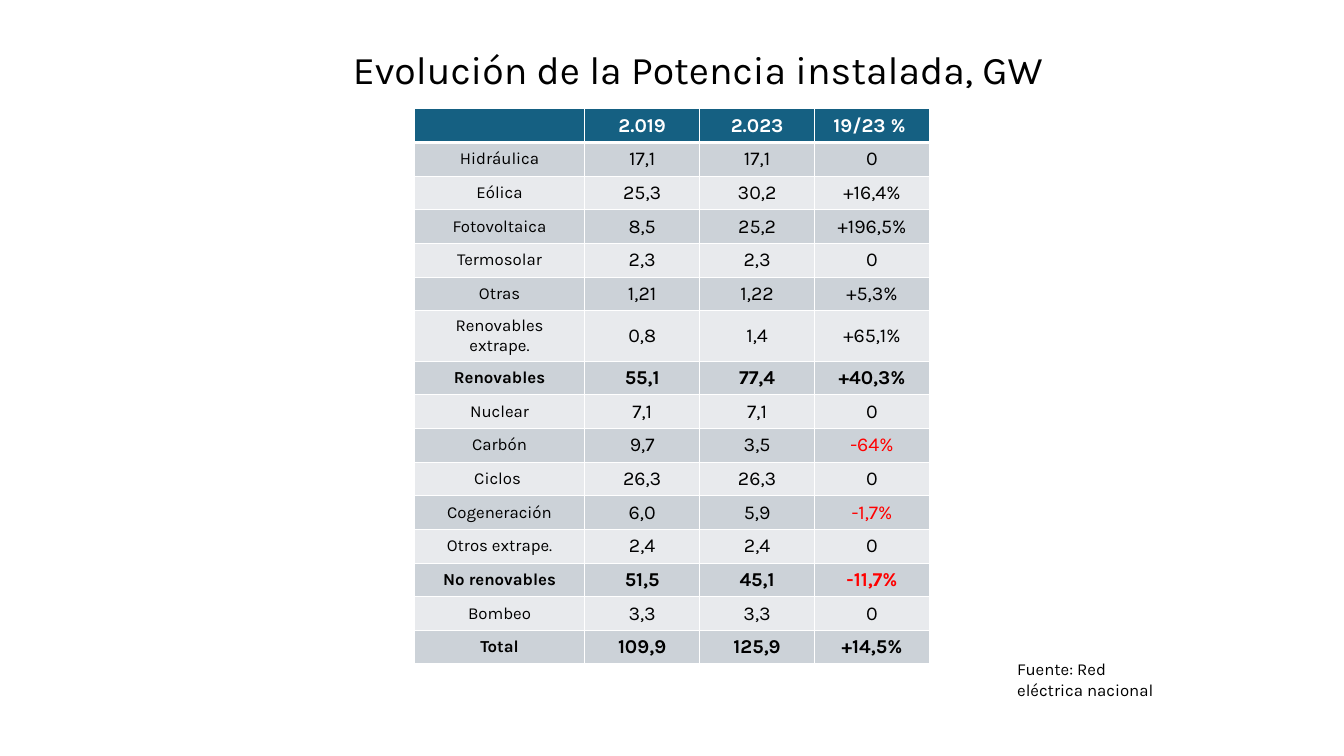
"""Build the slide on the evolution of installed power capacity."""
from dataclasses import dataclass

from lxml.etree import SubElement
from pptx import Presentation
from pptx.dml.color import RGBColor
from pptx.enum.text import MSO_ANCHOR as Anchor, PP_ALIGN as Align
from pptx.oxml.ns import qn
from pptx.slide import Slide
from pptx.table import _Cell as Cell
from pptx.text.text import TextFrame
from pptx.util import Emu, Pt

EMU_PER_PX = 9144


@dataclass(frozen=True)
class Theme:
    font: str = "Karla"
    ink: str = "000000"
    falling: str = "FF0000"
    white: str = "FFFFFF"
    header: str = "156082"
    bands: tuple[str, str] = ("CCD2D8", "E8EAED")
    title_size: int = 28
    figure_size: int = 14
    label_size: int = 12
    rule: int = 1
    header_rule: int = 3


@dataclass(frozen=True)
class Box:
    left: int
    top: int
    width: int
    height: int

    def emu(self) -> tuple[Emu, ...]:
        return tuple(map(px, (self.left, self.top, self.width, self.height)))


@dataclass(frozen=True)
class Source:
    label: str
    in_2019: str
    in_2023: str
    change: str
    subtotal: bool = False

    def texts(self) -> tuple[str, ...]:
        return self.label, self.in_2019, self.in_2023, self.change


THEME = Theme()
HEADINGS = Source("", "2.019", "2.023", "19/23 % ", True)
SOURCES = (
    Source("Hidráulica", "17,1", "17,1", "0"),
    Source("Eólica", "25,3", "30,2", "+16,4%"),
    Source("Fotovoltaica", "8,5", "25,2", "+196,5%"),
    Source("Termosolar", "2,3", "2,3", "0"),
    Source("Otras", "1,21", "1,22", "+5,3%"),
    Source("Renovables extrape.", "0,8", "1,4", "+65,1%"),
    Source("Renovables", "55,1", "77,4", "+40,3%", True),
    Source("Nuclear", "7,1", "7,1", "0"),
    Source("Carbón", "9,7", "3,5", "-64%"),
    Source("Ciclos ", "26,3", "26,3", "0"),
    Source("Cogeneración", "6,0", "5,9", "-1,7%"),
    Source("Otros extrape.", "2,4", "2,4", "0"),
    Source("No renovables", "51,5", "45,1", "-11,7%", True),
    Source("Bombeo", "3,3", "3,3", "0"),
    Source("Total", "109,9", "125,9", "+14,5%", True),
)
COLUMN_WIDTHS = (169, 114, 114, 114)
HEADER_HEIGHT, ROW_HEIGHT = 26, 29


def px(length: int) -> Emu:
    return Emu(length * EMU_PER_PX)


def write(frame: TextFrame, text: str, *, size: int, color: str = THEME.ink,
          bold: bool = False, align: Align = Align.LEFT, spacing: float = 1.0) -> None:
    paragraph = frame.paragraphs[0]
    paragraph.alignment = align
    paragraph.line_spacing = spacing
    if not text:
        SubElement(paragraph._p, qn("a:endParaRPr"), sz=str(size * 100))
        return
    run = paragraph.add_run()
    run.text = text
    run.font.name = THEME.font
    run.font.size = Pt(size)
    run.font.bold = bold
    run.font.color.rgb = RGBColor.from_string(color)


def add_text(slide: Slide, box: Box, text: str, *, anchor: Anchor = Anchor.TOP, **style) -> None:
    frame = slide.shapes.add_textbox(*box.emu()).text_frame
    frame.word_wrap = True
    frame.vertical_anchor = anchor
    write(frame, text, **style)


def draw_borders(cell: Cell, top: int, bottom: int) -> None:
    properties = cell._tc.get_or_add_tcPr()
    widths = {"lnL": THEME.rule, "lnR": THEME.rule, "lnT": top, "lnB": bottom}
    for side, width in widths.items():
        line = SubElement(properties, qn(f"a:{side}"), w=str(Pt(width)))
        SubElement(SubElement(line, qn("a:solidFill")), qn("a:srgbClr"), val=THEME.white)


def draw_cell(cell: Cell, text: str, row: int, column: int, bold: bool) -> None:
    is_header = row == 0
    draw_borders(cell, THEME.header_rule if row == 1 else THEME.rule,
                 THEME.header_rule if is_header else THEME.rule)
    fill = THEME.header if is_header else THEME.bands[(row - 1) % 2]
    cell.fill.solid()
    cell.fill.fore_color.rgb = RGBColor.from_string(fill)
    cell.vertical_anchor = Anchor.MIDDLE
    color = THEME.white if is_header else THEME.falling if text.startswith("-") else THEME.ink
    size = THEME.figure_size if column else THEME.label_size
    write(cell.text_frame, text, size=size, color=color, bold=bold, align=Align.CENTER)


def add_capacity_table(slide: Slide, left: int, top: int) -> None:
    rows = (HEADINGS, *SOURCES)
    box = Box(left, top, sum(COLUMN_WIDTHS), HEADER_HEIGHT + ROW_HEIGHT * len(SOURCES))
    table = slide.shapes.add_table(len(rows), len(COLUMN_WIDTHS), *box.emu()).table
    for column, width in zip(table.columns, COLUMN_WIDTHS):
        column.width = px(width)
    for index, source in enumerate(rows):
        table.rows[index].height = px(ROW_HEIGHT if index else HEADER_HEIGHT)
        for column, text in enumerate(source.texts()):
            draw_cell(table.cell(index, column), text, index, column, source.subtotal)


def main() -> None:
    deck = Presentation()
    deck.slide_width, deck.slide_height = px(1333), px(750)
    slide = deck.slides.add_slide(deck.slide_layouts[6])
    add_text(slide, Box(117, -1, 1150, 145), "Evolución de la Potencia instalada, GW",
             anchor=Anchor.MIDDLE, size=THEME.title_size, align=Align.CENTER, spacing=0.9)
    add_capacity_table(slide, 411, 108)
    add_text(slide, Box(999, 649, 176, 50), "Fuente: Red eléctrica nacional",
             size=THEME.label_size)
    deck.save("out.pptx")


if __name__ == "__main__":
    main()
